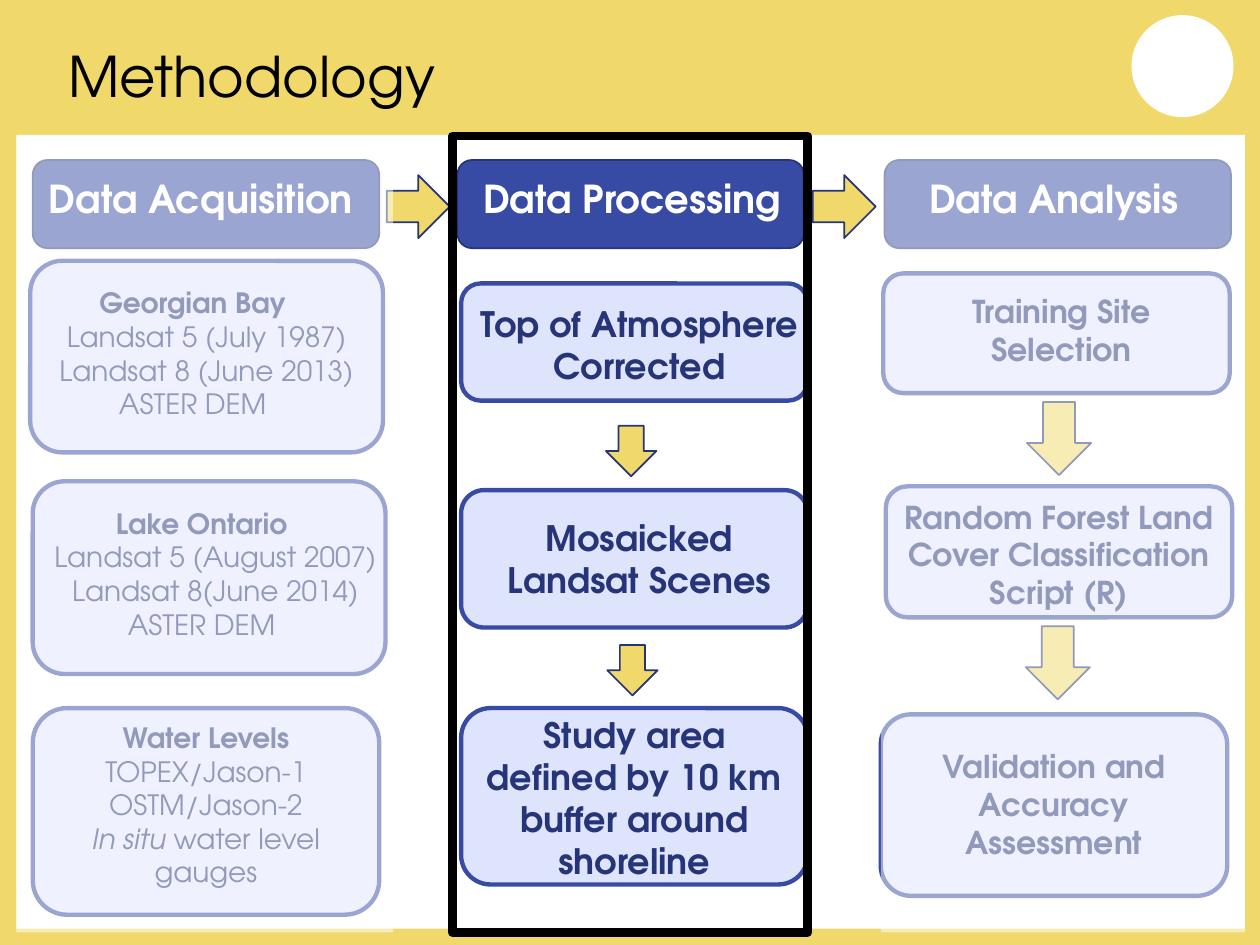
from pptx import Presentation
from pptx.dml.color import RGBColor
from pptx.enum.shapes import MSO_SHAPE
from pptx.enum.text import MSO_ANCHOR, PP_ALIGN
from pptx.oxml.ns import qn
from pptx.util import Inches, Pt
from lxml import etree

FONT = "TeX Gyre Adventor"
YELLOW = RGBColor(0xF0, 0xD9, 0x6A)
WHITE = RGBColor(0xFF, 0xFF, 0xFF)
BLACK = RGBColor(0, 0, 0)
NAVY = RGBColor(0x26, 0x35, 0x77)
BLUE = RGBColor(0x38, 0x4B, 0xA4)
PALE = RGBColor(0xDF, 0xE4, 0xFD)

prs = Presentation()
prs.slide_width, prs.slide_height = Inches(10), Inches(7.5)
slide = prs.slides.add_slide(prs.slide_layouts[5])
slide.background.fill.solid()
slide.background.fill.fore_color.rgb = YELLOW


def add_block(preset, box, fill=None, line=None, width=1):
    block = slide.shapes.add_shape(preset, *[Inches(v) for v in box])
    block.shadow.inherit = False
    if fill is None:
        block.fill.background()
    else:
        block.fill.solid()
        block.fill.fore_color.rgb = fill
    if line is None:
        block.line.fill.background()
    else:
        block.line.color.rgb = line
        block.line.width = Pt(width)
    return block


def add_label(box, lines, size, color):
    """Centred text; each line is (left indent, [(text, bold, italic), ...])."""
    frame = slide.shapes.add_textbox(*[Inches(v) for v in box]).text_frame
    frame.word_wrap = True
    for i, (indent, runs) in enumerate(lines):
        paragraph = frame.paragraphs[0] if i == 0 else frame.add_paragraph()
        paragraph.alignment = PP_ALIGN.CENTER
        if indent:
            paragraph._p.get_or_add_pPr().set("marL", str(Inches(indent)))
        for text, bold, italic in runs:
            run = paragraph.add_run()
            run.text = text
            run.font.name, run.font.size = FONT, Pt(size)
            run.font.bold, run.font.italic = bold, italic
            run.font.color.rgb = color


# Page panel, badge and title
add_block(MSO_SHAPE.RECTANGLE, (0.13, 1.07, 9.75, 6.3), WHITE)
add_block(MSO_SHAPE.OVAL, (8.98, 0.12, 0.81, 0.81), WHITE)

title = slide.shapes.title
title.left, title.top = Inches(0.44), Inches(0.2)
title.width, title.height = Inches(7.81), Inches(0.72)
title.text_frame.vertical_anchor = MSO_ANCHOR.BOTTOM
heading = title.text_frame.paragraphs[0]
heading.alignment = PP_ALIGN.LEFT
heading.line_spacing = 0.9
heading_run = heading.add_run()
heading_run.text = "Methodology"
heading_run.font.name, heading_run.font.size = FONT, Pt(32)
heading_run.font.color.rgb = BLACK

# Column headers
for header_left, label_left, stage in [
    (0.26, 0.22, "Data Acquisition"),
    (3.63, 3.64, "Data Processing"),
    (7.02, 6.99, "Data Analysis"),
]:
    add_block(MSO_SHAPE.ROUNDED_RECTANGLE, (header_left, 1.27, 2.75, 0.7), BLUE, NAVY)
    add_label((label_left, 1.34, 2.75, 0.47), [(0, [(stage, True, False)])], 22, WHITE)

# Data sources
INDENT = 0.22
sources = [
    ((0.24, 2.07, 2.8, 1.52), (0.13, 2.22, 2.8, 1.18), "Georgian Bay", [
        (INDENT, [("Landsat 5 (July 1987)", False, False)]),
        (INDENT, [("Landsat 8 (June 2013)", False, False)]),
        (0, [("ASTER DEM", False, False)])]),
    ((0.26, 3.82, 2.8, 1.53), (0.08, 3.97, 3.04, 1.18), "Lake Ontario", [
        (INDENT, [("Landsat 5 (August 2007)", False, False)]),
        (INDENT, [("Landsat 8(June 2014)", False, False)]),
        (0, [("ASTER DEM", False, False)])]),
    ((0.26, 5.62, 2.75, 1.64), (0.26, 5.67, 2.75, 1.45), "Water Levels", [
        (0, [("TOPEX/Jason-1", False, False)]),
        (0, [("OSTM/Jason-2", False, False)]),
        (0, [("In situ ", False, True), ("water level gauges", False, False)])]),
]
for card, label, name, details in sources:
    add_block(MSO_SHAPE.ROUNDED_RECTANGLE, card, PALE, BLUE, 2.5)
    add_label(label, [(0, [(name, True, False)])] + details, 16, NAVY)

# Processing and analysis steps: card left, top, height; label left, top, height
steps = [
    (3.66, 2.25, 0.93, 3.7, 2.35, 0.77, 20, "Top of Atmosphere Corrected"),
    (3.66, 3.89, 1.09, 3.7, 4.05, 0.77, 20, "Mosaicked Landsat Scenes"),
    (3.66, 5.62, 1.4, 3.66, 5.61, 1.11, 20,
     "Study area defined by 10 km buffer around shoreline"),
    (7.01, 2.17, 0.95, 7.05, 2.27, 0.71, 18, "Training Site Selection"),
    (7.03, 3.86, 1.04, 7.03, 3.9, 1.01, 18,
     "Random Forest Land Cover Classification Script (R)"),
    (6.99, 5.67, 1.44, 6.99, 5.88, 1.01, 18, "Validation and Accuracy Assessment"),
]
for left, top, height, label_left, label_top, label_height, size, step in steps:
    add_block(MSO_SHAPE.ROUNDED_RECTANGLE, (left, top, 2.75, height), PALE, BLUE, 2.5)
    add_label((label_left, label_top, 2.75, label_height),
              [(0, [(step, True, False)])], size, NAVY)

# Flow arrows
for direction, place in [
    (MSO_SHAPE.RIGHT_ARROW, (3.07, 1.39, 0.5, 0.5)),
    (MSO_SHAPE.RIGHT_ARROW, (6.45, 1.39, 0.5, 0.5)),
    (MSO_SHAPE.DOWN_ARROW, (4.81, 3.38, 0.4, 0.4)),
    (MSO_SHAPE.DOWN_ARROW, (4.82, 5.12, 0.4, 0.4)),
    (MSO_SHAPE.DOWN_ARROW, (8.15, 3.19, 0.51, 0.58)),
    (MSO_SHAPE.DOWN_ARROW, (8.14, 4.97, 0.51, 0.58)),
]:
    add_block(direction, place, YELLOW, NAVY)

# Highlight the middle column and fade the other two
add_block(MSO_SHAPE.RECTANGLE, (3.59, 1.08, 2.82, 6.32), None, BLACK, 5)
for veil_left, veil_width in [(0.13, 2.99), (6.99, 2.89)]:
    veil = add_block(MSO_SHAPE.RECTANGLE, (veil_left, 1.08, veil_width, 6.32), WHITE)
    veil_color = veil._element.spPr.find(qn("a:solidFill")).find(qn("a:srgbClr"))
    etree.SubElement(veil_color, qn("a:alpha")).set("val", "50000")

prs.save("out.pptx")
